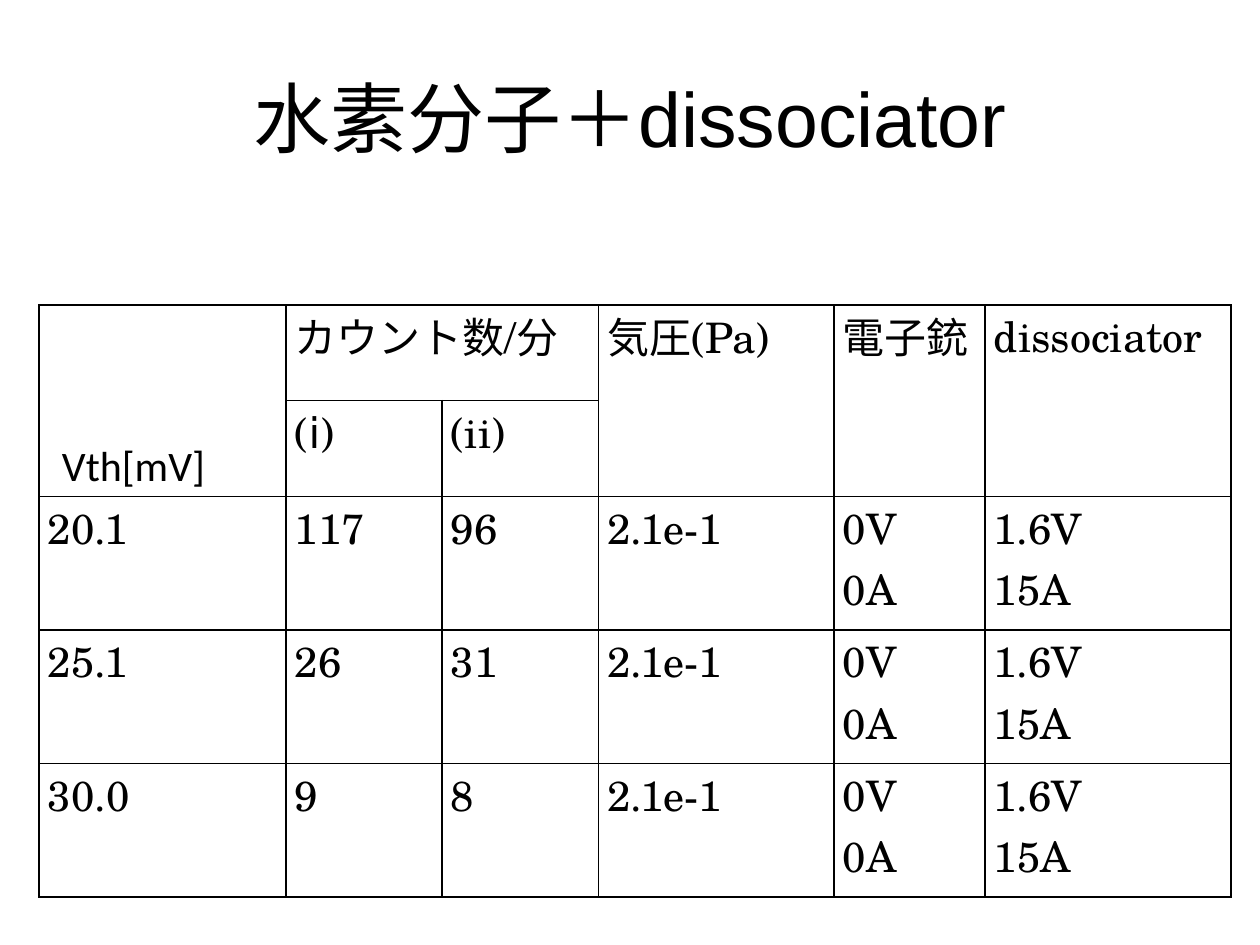
from lxml.etree import SubElement
from pptx import Presentation
from pptx.dml.color import RGBColor
from pptx.enum.text import MSO_ANCHOR as Anchor, PP_ALIGN as Align
from pptx.oxml.ns import qn
from pptx.util import Inches, Pt

BLACK = RGBColor(0x00, 0x00, 0x00)
TABLE_FONT = "TeX Gyre Schola"
COLUMN_WIDTHS = [1.96, 1.24, 1.24, 1.87, 1.2, 1.95]
ROW_HEIGHTS = [0.76, 0.76, 1.06, 1.06, 1.06]
HEADER_SPANS = [(0, 0, 1, 0), (0, 1, 0, 2), (0, 3, 1, 3), (0, 4, 1, 4), (0, 5, 1, 5)]
HEADINGS = [
    ["", "カウント数/分", "", "気圧(Pa)", "電子銃", "dissociator"],
    ["", "(ⅰ)", "(ii)", "", "", ""],
]
COUNTS = [("20.1", "117", "96"), ("25.1", "26", "31"), ("30.0", "9", "8")]
CONDITIONS = ["2.1e-1", "0V\n0A", "1.6V\n15A"]


class SlideBuilder:
    """Holds the text style and the current slide, and adds elements to it."""

    def __init__(self, page, color=BLACK, size=24):
        self.page = page
        self.color = color
        self.size = size

    def apply(self, target, values):
        for name, value in values.items():
            setattr(target, name, value)

    def add_span(self, para, text, font, size=None):
        span = para.add_run()
        span.text = text
        self.apply(span.font, {"name": font, "size": Pt(size or self.size)})
        span.font.color.rgb = self.color

    def add_text(self, left, top, width, height, spans, size=None, anchor=Anchor.TOP):
        box = self.page.shapes.add_textbox(*map(Inches, (left, top, width, height)))
        self.apply(box.text_frame, {"word_wrap": True, "vertical_anchor": anchor})
        para = box.text_frame.paragraphs[0]
        para.alignment = Align.CENTER
        for text, font in spans:
            self.add_span(para, text, font, size)

    def add_borders(self, cell, width=1):
        properties = cell._tc.get_or_add_tcPr()
        for side in ("lnL", "lnR", "lnT", "lnB"):
            line = SubElement(properties, qn(f"a:{side}"), w=str(Pt(width)))
            fill = SubElement(line, qn("a:solidFill"))
            SubElement(fill, qn("a:srgbClr"), val=str(self.color))

    def fill_cell(self, cell, text):
        margins = {"margin_left": 0.07, "margin_right": 0.07, "margin_top": 0, "margin_bottom": 0}
        self.apply(cell, {name: Inches(value) for name, value in margins.items()})
        self.add_borders(cell)
        cell.fill.background()
        if not text:
            return
        frame = cell.text_frame
        for index, line in enumerate(text.split("\n")):
            para = frame.add_paragraph() if index else frame.paragraphs[0]
            para.alignment = Align.JUSTIFY
            self.add_span(para, line, TABLE_FONT)

    def add_table(self, left, top, widths, heights, rows, spans):
        area = map(Inches, (left, top, sum(widths), sum(heights)))
        table = self.page.shapes.add_table(len(heights), len(widths), *area).table
        self.apply(table, {"first_row": False, "horz_banding": False})
        for column, width in zip(table.columns, widths):
            column.width = Inches(width)
        for row, height, texts in zip(table.rows, heights, rows):
            row.height = Inches(height)
            for cell, text in zip(row.cells, texts):
                self.fill_cell(cell, text)
        for first_row, first_column, last_row, last_column in spans:
            table.cell(first_row, first_column).merge(table.cell(last_row, last_column))


def main():
    deck = Presentation()
    deck.slide_width, deck.slide_height = Inches(10), Inches(7.5)
    builder = SlideBuilder(deck.slides.add_slide(deck.slide_layouts[6]))
    title = [("水素分子＋", "Arial Narrow"), ("dissociator", "Arial")]
    builder.add_text(0.5, 0.3, 9, 1.25, title, size=44, anchor=Anchor.MIDDLE)
    rows = HEADINGS + [[*counts, *CONDITIONS] for counts in COUNTS]
    builder.add_table(0.31, 2.42, COLUMN_WIDTHS, ROW_HEIGHTS, rows, HEADER_SPANS)
    builder.add_text(0.16, 3.44, 1.8, 0.55, [("Vth[mV]", "Calibri")])
    deck.save("out.pptx")


if __name__ == "__main__":
    main()
